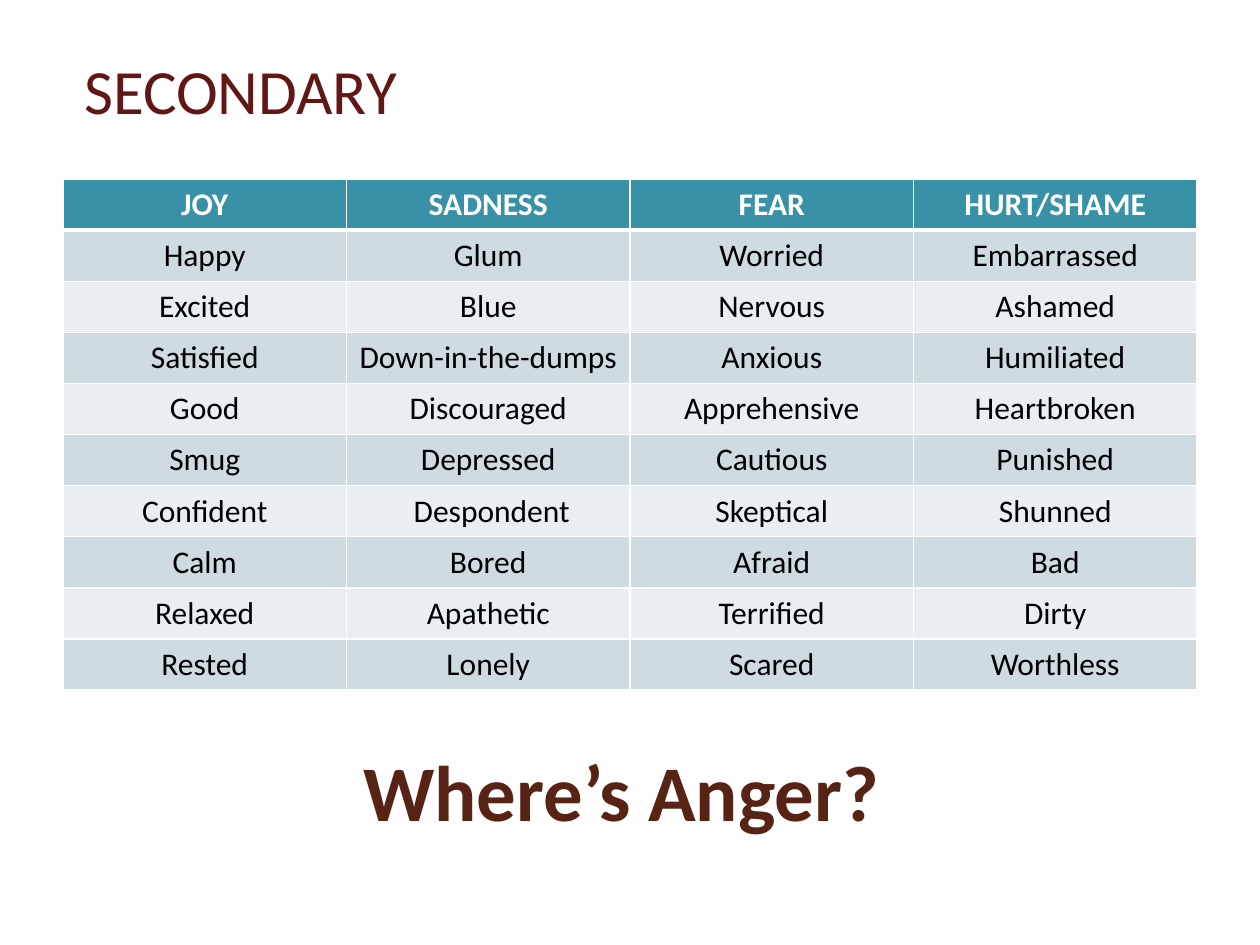
from lxml import etree
from pptx import Presentation, util as u
from pptx.dml.color import RGBColor
from pptx.enum import shapes, text
from pptx.oxml import ns

WHITE = RGBColor(0xFF, 0xFF, 0xFF)
BLACK = RGBColor(0x00, 0x00, 0x00)
MAROON = RGBColor(0x62, 0x17, 0x17)
BROWN = RGBColor(0x57, 0x23, 0x14)
TEAL = RGBColor(0x38, 0x91, 0xA7)
BANDS = (RGBColor(0xCE, 0xDC, 0xE1), RGBColor(0xE8, 0xEE, 0xF1))

LEFT, WIDTH = u.Cm(1.27), u.Cm(22.86)

EMOTIONS = [
    ("JOY", "SADNESS", "FEAR", "HURT/SHAME"),
    ("Happy", "Glum", "Worried", "Embarrassed"),
    ("Excited", "Blue", "Nervous", "Ashamed"),
    ("Satisfied", "Down-in-the-dumps", "Anxious", "Humiliated"),
    ("Good", "Discouraged", "Apprehensive", "Heartbroken"),
    ("Smug", "Depressed", "Cautious", "Punished"),
    ("Confident", " Despondent", "Skeptical", "Shunned"),
    ("Calm", "Bored", "Afraid", "Bad"),
    ("Relaxed", "Apathetic", "Terrified", "Dirty"),
    ("Rested", "Lonely", "Scared", "Worthless"),
]


class Page:
    """The current slide and its text style."""

    font_name = "Calibri"

    def __init__(self, deck):
        self.shapes = deck.slides.add_slide(deck.slide_layouts[6]).shapes

    def set_text(self, frame, words, size, color, bold=False,
                 align=text.PP_ALIGN.CENTER):
        para = frame.paragraphs[0]
        para.text = words
        para.alignment = align
        font = para.font
        font.name, font.size, font.bold = self.font_name, u.Pt(size), bold
        font.color.rgb = color
        return para

    def heading(self, words, left, top, width, height):
        box = self.shapes.add_shape(
            shapes.MSO_SHAPE.RECTANGLE, left, top, width, height)
        box.shadow.inherit = False
        box.fill.solid()
        box.fill.fore_color.rgb = WHITE
        box.line.color.rgb = WHITE
        box.line.width = u.Pt(0.85)
        frame = box.text_frame
        frame.vertical_anchor = text.MSO_ANCHOR.MIDDLE
        frame.margin_left = u.Cm(0.43)
        para = self.set_text(frame, words, 36, MAROON,
                             align=text.PP_ALIGN.LEFT)
        para.space_before = u.Pt(1)

    def question(self, words, left, top, width, height):
        frame = self.shapes.add_textbox(left, top, width, height).text_frame
        frame.word_wrap = True
        frame.vertical_anchor = text.MSO_ANCHOR.MIDDLE
        self.set_text(frame, words, 45, BROWN, bold=True)

    def table(self, rows, left, top, width, height):
        """Add a banded table whose first row is the header."""
        grid = self.shapes.add_table(
            len(rows), len(rows[0]), left, top, width, height).table
        for i, row in enumerate(rows):
            header = i == 0
            for j, words in enumerate(row):
                cell = grid.cell(i, j)
                cell.vertical_anchor = text.MSO_ANCHOR.MIDDLE
                self.set_text(cell.text_frame, words, 18,
                              WHITE if header else BLACK, bold=header)
                self.borders(cell, top=3 if i == 1 else 1,
                             bottom=3 if header else 1)
                cell.fill.solid()
                cell.fill.fore_color.rgb = TEAL if header else BANDS[(i - 1) % 2]

    def borders(self, cell, top, bottom):
        """Draw white cell borders; call before the cell is filled."""
        props = cell._tc.get_or_add_tcPr()
        for side, points in (("L", 1), ("R", 1), ("T", top), ("B", bottom)):
            line = etree.SubElement(
                props, ns.qn(f"a:ln{side}"), w=str(u.Pt(points)))
            fill = etree.SubElement(line, ns.qn("a:solidFill"))
            etree.SubElement(fill, ns.qn("a:srgbClr"), val=str(WHITE))


def main():
    deck = Presentation()
    deck.slide_width, deck.slide_height = u.Cm(25.4), u.Cm(19.05)
    page = Page(deck)
    page.question("Where’s Anger? ", LEFT, u.Cm(14.33), WIDTH, u.Cm(3.18))
    page.heading("SECONDARY", LEFT, u.Cm(0.91), u.Cm(11.18), u.Cm(1.78))
    page.table(EMOTIONS, LEFT, u.Cm(3.61), WIDTH, u.Cm(10.3))
    deck.save("out.pptx")


if __name__ == "__main__":
    main()
